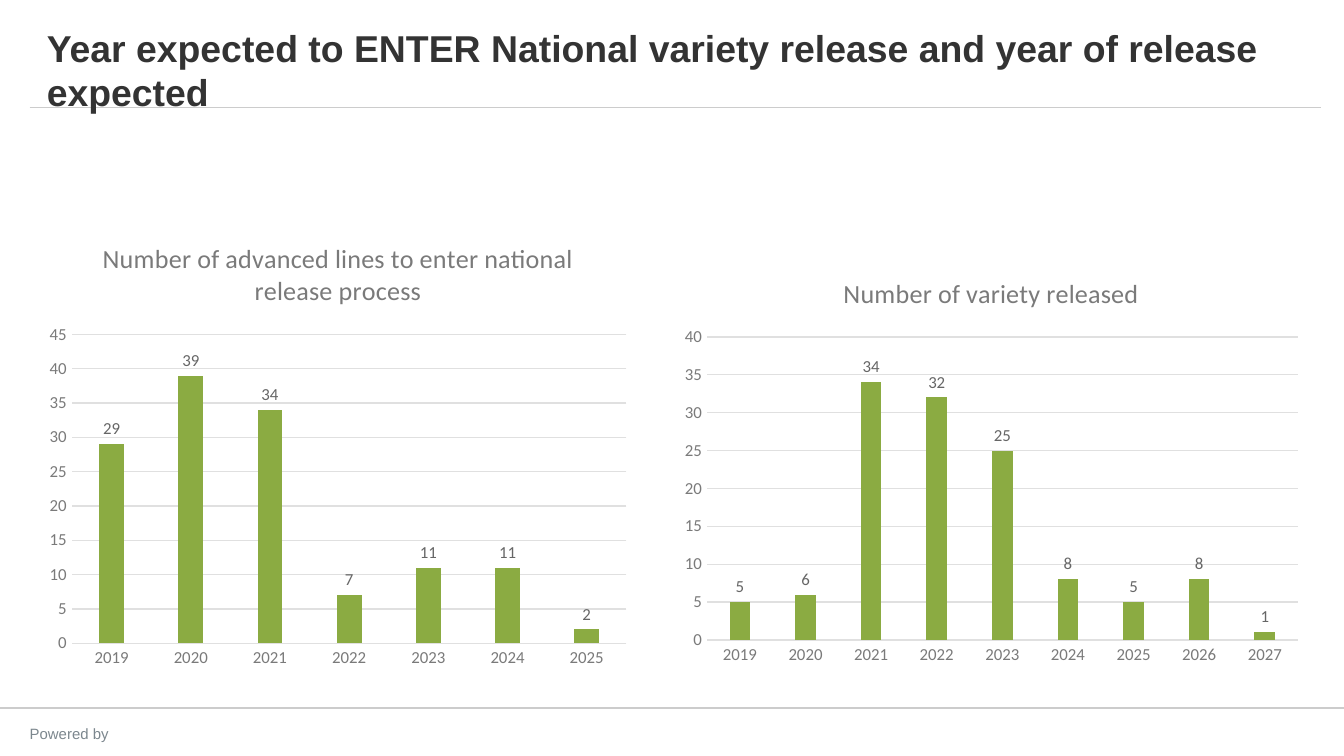
from lxml import etree
from pptx import Presentation
from pptx.chart.data import CategoryChartData
from pptx.dml.color import RGBColor
from pptx.enum.chart import XL_CHART_TYPE, XL_LABEL_POSITION, XL_TICK_MARK
from pptx.enum.shapes import MSO_CONNECTOR
from pptx.enum.text import MSO_ANCHOR, PP_ALIGN
from pptx.oxml.ns import qn
from pptx.util import Pt

COLUMN = XL_CHART_TYPE.COLUMN_CLUSTERED
OUTSIDE_END = XL_LABEL_POSITION.OUTSIDE_END
NO_TICK = XL_TICK_MARK.NONE
STRAIGHT = MSO_CONNECTOR.STRAIGHT
TOP, BOTTOM = MSO_ANCHOR.TOP, MSO_ANCHOR.BOTTOM
LEFT, CENTER = PP_ALIGN.LEFT, PP_ALIGN.CENTER

PX = 4572
THEME = {
    "heading_font": "Arial",
    "chart_font": "Calibri",
    "heading": RGBColor.from_string("333333"),
    "footer": RGBColor.from_string("7C878E"),
    "rule": RGBColor.from_string("CCCCCC"),
    "grid": RGBColor.from_string("E0E0E0"),
    "axis": RGBColor.from_string("7A7A7A"),
    "label": RGBColor.from_string("666666"),
    "bar": RGBColor.from_string("8BAB42"),
    "heading_size": 20,
    "footer_size": 8,
    "chart_title_size": 14,
    "chart_size": 10,
    "axis_size": 9,
}


def style_font(font, name, size, color, bold=False):
    font.name = name
    font.size = Pt(size)
    font.color.rgb = color
    font.bold = bold


presentation = Presentation()
presentation.slide_width = 2000 * PX
presentation.slide_height = 1125 * PX
slide = presentation.slides.add_slide(presentation.slide_layouts[6])

for left, right, y, width in [(0, 2000, 1054, 1), (44, 1966, 160, 0.5)]:
    rule = slide.shapes.add_connector(STRAIGHT, left * PX, y * PX, right * PX, y * PX)
    rule.line.color.rgb = THEME["rule"]
    rule.line.width = Pt(width)
    etree.SubElement(rule._element.spPr, qn("a:effectLst"))

texts = [
    ("Powered by", (-12, 1069, 230, 36), TOP, CENTER, "footer", False),
    ("Year expected to ENTER National variety release and year of release expected",
     (50, 14, 1900, 166), BOTTOM, LEFT, "heading", True),
]
for text, box, anchor, alignment, role, bold in texts:
    shape = slide.shapes.add_textbox(*[length * PX for length in box])
    shape.text_frame.word_wrap = True
    shape.text_frame.vertical_anchor = anchor
    paragraph = shape.text_frame.paragraphs[0]
    paragraph.alignment = alignment
    run = paragraph.add_run()
    run.text = text
    style_font(run.font, THEME["heading_font"], THEME[role + "_size"], THEME[role], bold)

charts = [
    ("Number of advanced lines to enter national release process",
     (56, 326, 894, 682), [29, 39, 34, 7, 11, 11, 2]),
    ("Number of variety released",
     (1000, 380, 950, 622), [5, 6, 34, 32, 25, 8, 5, 8, 1]),
]
for title, box, values in charts:
    data = CategoryChartData()
    data.categories = [str(2019 + index) for index in range(len(values))]
    data.add_series("Series 1", values)
    chart = slide.shapes.add_chart(COLUMN, *[length * PX for length in box], data).chart
    style_font(chart.font, THEME["chart_font"], THEME["chart_size"], THEME["heading"])
    chart.has_legend = False

    chart.has_title = True
    run = chart.chart_title.text_frame.paragraphs[0].add_run()
    run.text = title
    style_font(run.font, THEME["chart_font"], THEME["chart_title_size"], THEME["axis"])
    chart.chart_title.include_in_layout = False

    plot = chart.plots[0]
    plot.gap_width = 219
    plot.overlap = -27
    plot.vary_by_categories = False
    series = plot.series[0]
    series.format.fill.solid()
    series.format.fill.fore_color.rgb = THEME["bar"]
    labels = series.data_labels
    labels.show_value = True
    labels.position = OUTSIDE_END
    style_font(labels.font, THEME["chart_font"], THEME["axis_size"], THEME["label"])

    for axis in (chart.category_axis, chart.value_axis):
        axis.major_tick_mark = NO_TICK
        axis.minor_tick_mark = NO_TICK
        style_font(axis.tick_labels.font, THEME["chart_font"], THEME["axis_size"], THEME["axis"])
    chart.value_axis.format.line.fill.background()
    for line in (chart.category_axis.format.line, chart.value_axis.major_gridlines.format.line):
        line.color.rgb = THEME["grid"]
        line.width = Pt(0.75)

presentation.save("out.pptx")
